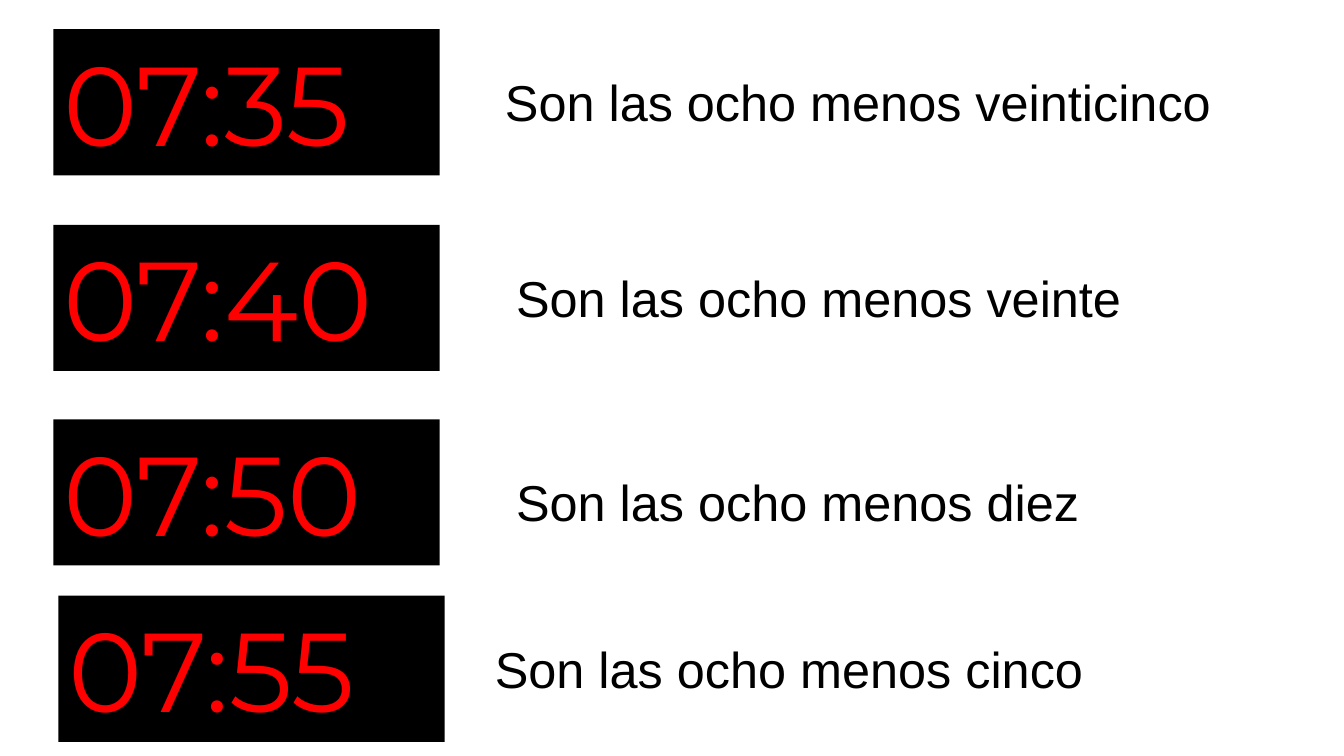
from dataclasses import dataclass

from pptx import Presentation
from pptx.dml.color import RGBColor
from pptx.enum.shapes import MSO_SHAPE
from pptx.enum.text import MSO_ANCHOR, MSO_AUTO_SIZE, PP_ALIGN
from pptx.shapes.autoshape import Shape
from pptx.slide import Slide
from pptx.util import Inches, Pt

RECTANGLE = MSO_SHAPE.RECTANGLE
TOP = MSO_ANCHOR.TOP
LEFT = PP_ALIGN.LEFT
FIT_SHAPE = MSO_AUTO_SIZE.SHAPE_TO_FIT_TEXT

BLACK = "000000"
RED = "FF0000"
CLOCK_WIDTH, CLOCK_HEIGHT = 3.83, 1.45
PHRASE_HEIGHT = 0.71


@dataclass(frozen=True)
class ClockTime:
    digits: str
    clock_left: float
    clock_top: float
    phrase: str
    phrase_left: float
    phrase_top: float
    phrase_width: float


CLOCK_TIMES = [
    ClockTime("07:35", 0.53, 0.29, "Son las ocho menos veinticinco", 4.91, 0.66, 7.49),
    ClockTime("07:40", 0.53, 2.23, "Son las ocho menos veinte", 5.02, 2.6, 7.1),
    ClockTime("07:50", 0.53, 4.16, "Son las ocho menos diez", 5.02, 4.62, 6.42),
    ClockTime("07:55", 0.58, 5.91, "Son las ocho menos cinco", 4.81, 6.28, 6.63),
]


def color(hex_value: str) -> RGBColor:
    return RGBColor.from_string(hex_value)


def write(box: Shape, words: str, font_name: str, size: float, hex_value: str) -> None:
    frame = box.text_frame
    frame.text = words
    frame.word_wrap = True
    frame.auto_size = FIT_SHAPE
    frame.vertical_anchor = TOP
    paragraph = frame.paragraphs[0]
    paragraph.alignment = LEFT
    font = paragraph.runs[0].font
    font.name = font_name
    font.size = Pt(size)
    font.color.rgb = color(hex_value)


def draw_clock(slide: Slide, time: ClockTime) -> None:
    clock = slide.shapes.add_shape(
        RECTANGLE, Inches(time.clock_left), Inches(time.clock_top),
        Inches(CLOCK_WIDTH), Inches(CLOCK_HEIGHT))
    clock.shadow.inherit = False
    clock.fill.solid()
    clock.fill.fore_color.rgb = color(BLACK)
    clock.line.fill.background()
    write(clock, time.digits, "Montserrat", 80, RED)


def draw_phrase(slide: Slide, time: ClockTime) -> None:
    phrase = slide.shapes.add_textbox(
        Inches(time.phrase_left), Inches(time.phrase_top),
        Inches(time.phrase_width), Inches(PHRASE_HEIGHT))
    write(phrase, time.phrase, "Arial", 36, BLACK)


def main() -> None:
    presentation = Presentation()
    presentation.slide_width = Inches(13.33)
    presentation.slide_height = Inches(7.5)
    slide = presentation.slides.add_slide(presentation.slide_layouts[6])
    for time in CLOCK_TIMES:
        draw_clock(slide, time)
        draw_phrase(slide, time)
    presentation.save("out.pptx")


if __name__ == "__main__":
    main()
